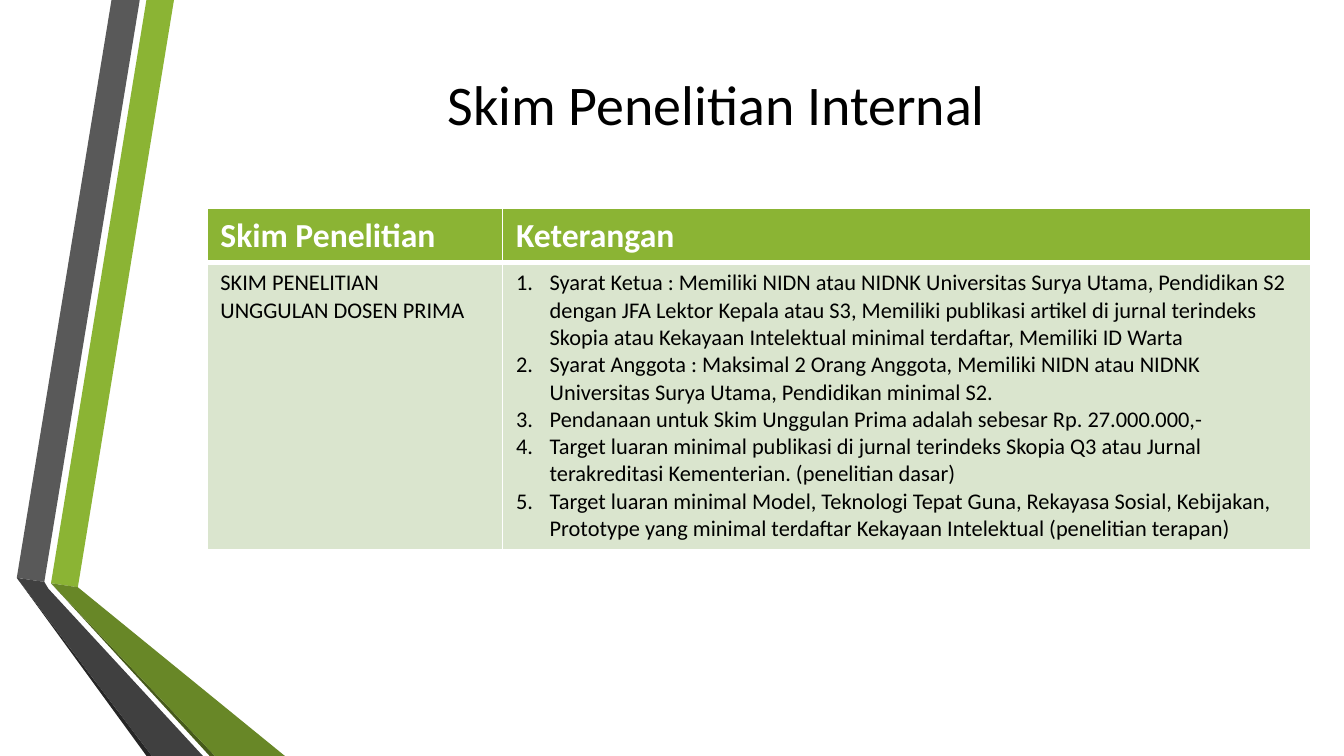
import pptx
import pptx.util
import pptx.dml.color
import pptx.enum.text
import lxml.etree

RGB = pptx.dml.color.RGBColor
WHITE = RGB(0xFF, 0xFF, 0xFF)
BLACK = RGB(0, 0, 0)
GREEN = RGB(0x8B, 0xB4, 0x34)
OLIVE = RGB(0x68, 0x87, 0x27)
MOSS = RGB(0x46, 0x5A, 0x1A)
PALE = RGB(0xDA, 0xE5, 0xCE)
GRAY = RGB(0x59, 0x59, 0x59)
DARK = RGB(0x40, 0x40, 0x40)
INK = RGB(0x26, 0x26, 0x26)
PX = 4572
NS = "{http://schemas.openxmlformats.org/drawingml/2006/main}"


def style(para, form, color):
    for key, value in form.items():
        setattr(para.font, key, value)
    para.font.color.rgb = color


def edge(cell, side, width):
    props = cell._tc.get_or_add_tcPr()
    line = lxml.etree.SubElement(props, NS + side, w=str(pptx.util.Pt(width)))
    fill = lxml.etree.SubElement(line, NS + "solidFill")
    lxml.etree.SubElement(fill, NS + "srgbClr", val=str(WHITE))


deck = pptx.Presentation()
deck.slide_width = 2000 * PX
deck.slide_height = 1125 * PX
slide = deck.slides.add_slide(deck.slide_layouts[5])

bands = [
    (GREEN, [(76, 868), (116, 874), (259, 0), (218, 0)]),
    (GRAY, [(208, 0), (166, 0), (25, 860), (66, 866)]),
    (INK, [(25, 860), (218, 1125), (226, 1125)]),
    (MOSS, [(76, 868), (312, 1125), (320, 1125)]),
    (OLIVE, [(76, 868), (320, 1125), (424, 1125), (116, 874)]),
    (DARK, [(302, 1125), (72, 876), (66, 866), (25, 860), (226, 1125)]),
]
for color, points in bands:
    pen = slide.shapes.build_freeform(*points[0], scale=PX)
    pen.add_line_segments(points[1:], close=True)
    band = pen.convert_to_shape()
    band.shadow.inherit = False
    band.fill.solid()
    band.fill.fore_color.rgb = color
    band.line.fill.background()

title = slide.shapes.title
place = {"left": 244, "top": 90, "width": 1644, "height": 126}
for key, value in place.items():
    setattr(title, key, value * PX)
frame = title.text_frame
frame.text = "Skim Penelitian Internal"
frame.vertical_anchor = pptx.enum.text.MSO_ANCHOR.MIDDLE
frame.paragraphs[0].alignment = pptx.enum.text.PP_ALIGN.CENTER
style(frame.paragraphs[0], {"name": "Calibri", "size": pptx.util.Pt(30)}, BLACK)

terms = [
    "Syarat Ketua : Memiliki NIDN atau NIDNK Universitas Surya Utama, Pendidikan S2 dengan JFA Lektor Kepala atau S3, Memiliki publikasi artikel di jurnal terindeks Skopia atau Kekayaan Intelektual minimal terdaftar, Memiliki ID Warta",
    "Syarat Anggota : Maksimal 2 Orang Anggota, Memiliki NIDN atau NIDNK Universitas Surya Utama, Pendidikan minimal S2.",
    "Pendanaan untuk Skim Unggulan Prima adalah sebesar Rp. 27.000.000,-",
    "Target luaran minimal publikasi di jurnal terindeks Skopia Q3 atau Jurnal terakreditasi Kementerian. (penelitian dasar)",
    "Target luaran minimal Model, Teknologi Tepat Guna, Rekayasa Sosial, Kebijakan, Prototype yang minimal terdaftar Kekayaan Intelektual (penelitian terapan)",
]
rows = [
    ["Skim Penelitian", "Keterangan"],
    ["SKIM PENELITIAN UNGGULAN DOSEN PRIMA", "\n".join(terms)],
]
head = {"name": "Calibri", "size": pptx.util.Pt(18), "bold": True}
body = {"name": "Calibri", "size": pptx.util.Pt(12), "bold": False}
looks = [(head, WHITE, GREEN, 3), (body, BLACK, PALE, 1)]

table = slide.shapes.add_table(2, 2, 308 * PX, 310 * PX, 1643 * PX, 484 * PX).table
for col, width in zip(table.columns, [440, 1203]):
    col.width = width * PX
for row, height in zip(table.rows, [81, 403]):
    row.height = height * PX

for r, (form, color, back, base) in enumerate(looks):
    for c, text in enumerate(rows[r]):
        cell = table.cell(r, c)
        cell.text = text
        top = 3 if r else 1
        for side, width in [("lnL", 1), ("lnR", 1), ("lnT", top), ("lnB", base)]:
            edge(cell, side, width)
        cell.fill.solid()
        cell.fill.fore_color.rgb = back
        for para in cell.text_frame.paragraphs:
            style(para, form, color)

for para in table.cell(1, 1).text_frame.paragraphs:
    props = para._p.get_or_add_pPr()
    props.set("marL", str(50 * PX))
    props.set("indent", str(-50 * PX))
    mark = lxml.etree.Element(NS + "buAutoNum", type="arabicPeriod")
    props.insert(0, mark)

deck.save("out.pptx")
